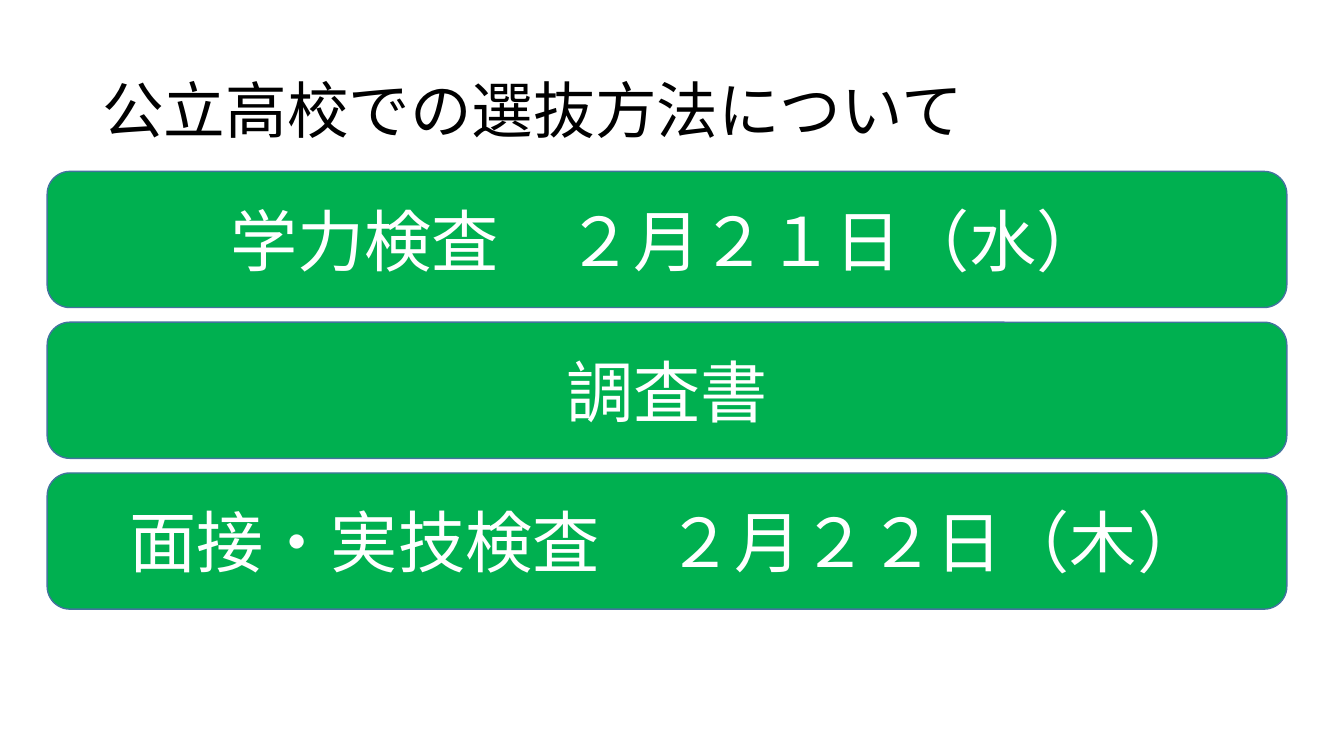
from pptx import Presentation
from pptx import util as u
from pptx.dml import color
from pptx.enum import shapes, text


def paint(hue):
    return color.RGBColor.from_string(hue)


def write(shape, words, size, hue):
    frame = shape.text_frame
    frame.word_wrap = True
    frame.vertical_anchor = text.MSO_ANCHOR.MIDDLE
    line = frame.paragraphs[0]
    line.text = words
    line.font.name = "Calibri"
    line.font.size = u.Pt(size)
    line.font.color.rgb = paint(hue)
    return line


deck = Presentation()
deck.slide_width = u.Cm(33.87)
deck.slide_height = u.Cm(19.05)
slide = deck.slides.add_slide(deck.slide_layouts[6])

title = slide.shapes.add_textbox(u.Cm(2.33), u.Cm(1.01), u.Cm(29.21), u.Cm(3.68))
head = write(title, "公立高校での選抜方法について", 44, "000000")
head.line_spacing = 0.9

tests = ["学力検査　２月２１日（水）", "調査書", "面接・実技検査　２月２２日（木）"]
top, step = 4.32, 3.8
for row, test in reversed(list(enumerate(tests))):
    bar = slide.shapes.add_shape(
        shapes.MSO_SHAPE.ROUNDED_RECTANGLE,
        u.Cm(1.19), u.Cm(top + row * step), u.Cm(31.24), u.Cm(3.43))
    bar.shadow.inherit = False
    bar.fill.solid()
    bar.fill.fore_color.rgb = paint("00B050")
    bar.line.color.rgb = paint("43739E")
    bar.line.width = u.Pt(1)
    label = write(bar, test, 48, "FFFFFF")
    label.alignment = text.PP_ALIGN.CENTER

deck.save("out.pptx")
